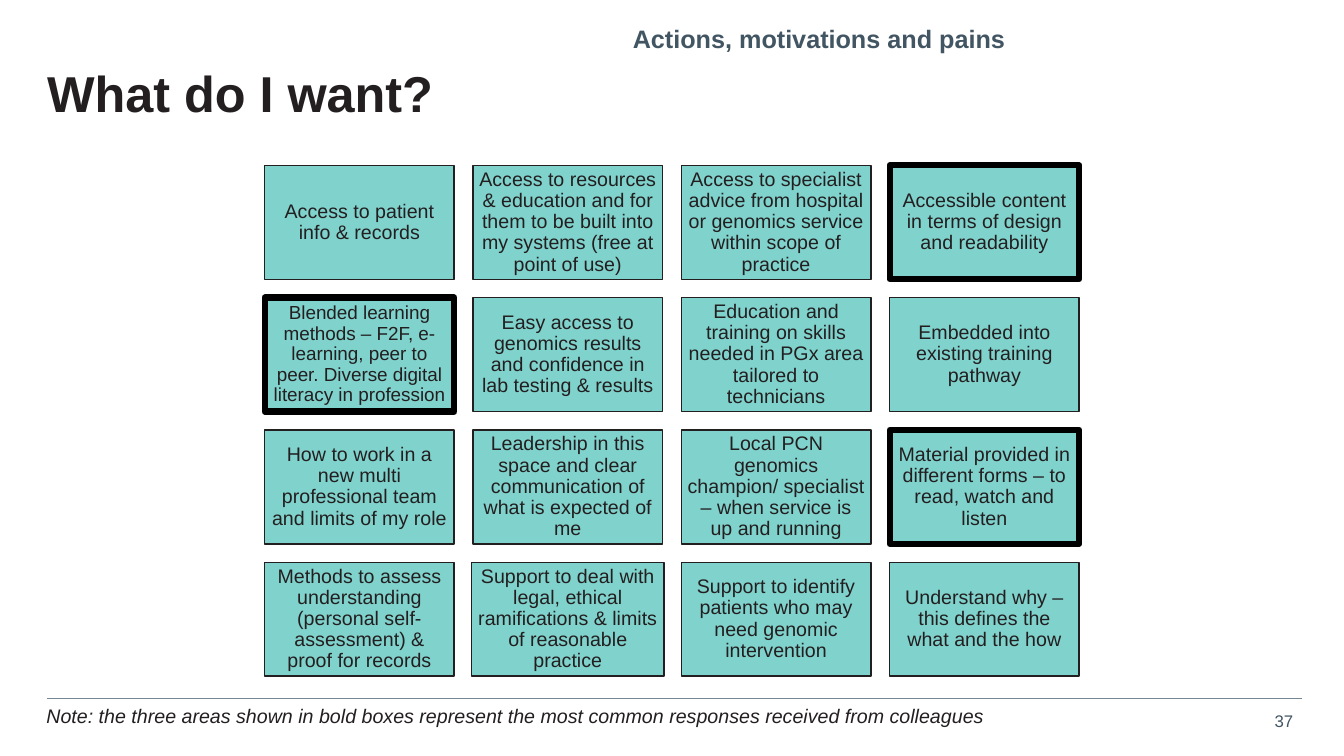
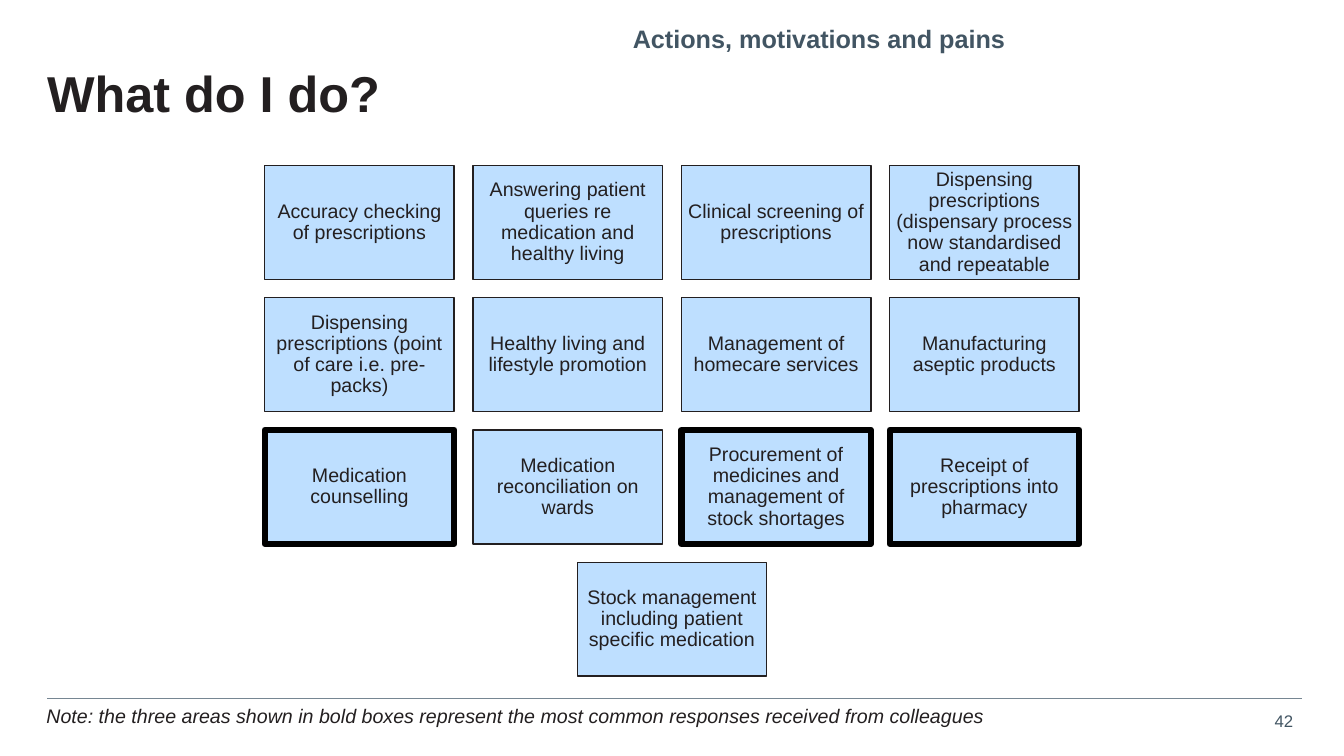
from dataclasses import dataclass

from lxml.etree import SubElement
from pptx import Presentation
from pptx.dml.color import RGBColor
from pptx.enum.shapes import MSO_CONNECTOR, MSO_SHAPE
from pptx.enum.text import MSO_ANCHOR, PP_ALIGN
from pptx.oxml.ns import qn
from pptx.util import Inches, Pt

INK = RGBColor(0x23, 0x1F, 0x20)
BLACK = RGBColor(0, 0, 0)
SLATE = RGBColor(0x42, 0x55, 0x63)
RULE_GREY = RGBColor(0x76, 0x86, 0x92)
TEAL = RGBColor(0x80, 0xD2, 0xCC)
SKY = RGBColor(0xBE, 0xDF, 0xFF)

SECTION = "Actions, motivations and pains"
NOTE = (
    "Note: the three areas shown in bold boxes represent "
    "the most common responses received from colleagues"
)


@dataclass
class Response:
    label: str
    common: bool = False
    size: float = 14
    widen: float = 0


WANTS = [
    Response("Access to patient info & records"),
    Response(
        "Access to resources & education and for them to be built into "
        "my systems (free at point of use)"
    ),
    Response(
        "Access to specialist advice from hospital or genomics service "
        "within scope of practice"
    ),
    Response("Accessible content in terms of design and readability", common=True),
    Response(
        "Blended learning methods – F2F, e-learning, peer to peer. "
        "Diverse digital literacy in profession",
        common=True,
        size=13.5,
    ),
    Response("Easy access to genomics results and confidence in lab testing & results"),
    Response("Education and training on skills needed in PGx area tailored to technicians"),
    Response("Embedded into existing training pathway"),
    Response("How to work in a new multi professional team and limits of my role"),
    Response("Leadership in this space and clear communication of what is expected of me"),
    Response("Local PCN genomics champion/ specialist – when service is up and running"),
    Response("Material provided in different forms – to read, watch and listen", common=True),
    Response("Methods to assess understanding (personal self-assessment) & proof for records"),
    Response(
        "Support to deal with legal, ethical ramifications & limits of reasonable practice",
        widen=0.2,
    ),
    Response("Support to identify patients who may need genomic intervention"),
    Response("Understand why – this defines the what and the how"),
]

TASKS = [
    Response("Accuracy checking of prescriptions"),
    Response("Answering patient queries re medication and healthy living"),
    Response("Clinical screening of prescriptions"),
    Response(
        "Dispensing prescriptions (dispensary process now standardised and repeatable"
    ),
    Response("Dispensing prescriptions (point of care i.e. pre-packs)"),
    Response("Healthy living and lifestyle promotion"),
    Response("Management of homecare services"),
    Response("Manufacturing aseptic products"),
    Response("Medication counselling", common=True),
    Response("Medication reconciliation on wards"),
    Response("Procurement of medicines and management of stock shortages", common=True),
    Response("Receipt of prescriptions into pharmacy", common=True),
    Response("Stock management including patient specific medication"),
]


class Deck:
    FONT = "Arial"
    COLUMNS = 4
    CARD_WIDTH, CARD_HEIGHT = 14.1, 15.07
    GAP_X, GAP_Y = 1.4, 2.43
    GRID_TOP = 21.87
    CARD_INSET = 0.06

    def __init__(self):
        self.presentation = Presentation()
        self.presentation.slide_width = Inches(13.33)
        self.presentation.slide_height = Inches(7.5)
        self.slide = None

    def across(self, percent):
        return round(self.presentation.slide_width * percent / 100)

    def down(self, percent):
        return round(self.presentation.slide_height * percent / 100)

    def area(self, left, top, width, height):
        return self.across(left), self.down(top), self.across(width), self.down(height)

    def set_text(self, frame, text, size, color=INK, bold=False, italic=False,
                 align=PP_ALIGN.LEFT, anchor=MSO_ANCHOR.TOP, spacing=None, inset=0):
        frame.text = text
        frame.word_wrap = True
        frame.vertical_anchor = anchor
        frame.margin_left = frame.margin_right = Inches(inset)
        frame.margin_top = frame.margin_bottom = Inches(inset)
        paragraph = frame.paragraphs[0]
        paragraph.alignment = align
        paragraph.line_spacing = spacing
        for run in paragraph.runs:
            run.font.name = self.FONT
            run.font.size = Pt(size)
            run.font.bold = bold
            run.font.italic = italic
            run.font.color.rgb = color

    def start(self, heading, number):
        self.slide = self.presentation.slides.add_slide(
            self.presentation.slide_layouts[5]
        )
        self.title(heading)
        self.text((35.85, 3.07, 38.95, 8.4), SECTION, 18, color=SLATE, bold=True,
                  align=PP_ALIGN.RIGHT, spacing=Pt(22))
        self.rule(3.5, 96.84, 92.4)
        self.text((3.45, 93.07, 88, 3.2), NOTE, 14, italic=True)
        self.text((93.15, 94, 3.07, 2.7), number, 12, color=SLATE,
                  align=PP_ALIGN.RIGHT)

    def title(self, heading):
        title = self.slide.shapes.title
        title.left, title.top, title.width, title.height = self.area(
            3.5, 9.07, 93.55, 9.07
        )
        self.set_text(title.text_frame, heading, 36, bold=True, spacing=0.9)

    def text(self, place, words, size, **style):
        box = self.slide.shapes.add_textbox(*self.area(*place))
        self.set_text(box.text_frame, words, size, **style)

    def rule(self, start, end, row):
        line = self.slide.shapes.add_connector(
            MSO_CONNECTOR.STRAIGHT,
            self.across(start), self.down(row), self.across(end), self.down(row),
        )
        line.line.color.rgb = RULE_GREY
        line.line.width = Pt(0.5)
        SubElement(line._element.spPr, qn("a:effectLst"))

    def card(self, response, left, top, fill):
        card = self.slide.shapes.add_shape(
            MSO_SHAPE.RECTANGLE,
            *self.area(left - response.widen / 2, top,
                       self.CARD_WIDTH + response.widen, self.CARD_HEIGHT),
        )
        card.shadow.inherit = False
        card.fill.solid()
        card.fill.fore_color.rgb = fill
        card.line.color.rgb = BLACK if response.common else INK
        card.line.width = Pt(4.5 if response.common else 1)
        self.set_text(card.text_frame, response.label, response.size,
                      align=PP_ALIGN.CENTER, anchor=MSO_ANCHOR.MIDDLE,
                      spacing=0.9, inset=self.CARD_INSET)

    def cards(self, responses, fill):
        pitch = self.CARD_WIDTH + self.GAP_X
        for first in range(0, len(responses), self.COLUMNS):
            row = responses[first:first + self.COLUMNS]
            left = (100 - len(row) * pitch + self.GAP_X) / 2
            top = self.GRID_TOP + first // self.COLUMNS * (self.CARD_HEIGHT + self.GAP_Y)
            for column, response in enumerate(row):
                self.card(response, left + column * pitch, top, fill)


def main():
    deck = Deck()
    for heading, number, responses, fill in (
        ("What do I want?", "37", WANTS, TEAL),
        ("What do I do?", "42", TASKS, SKY),
    ):
        deck.start(heading, number)
        deck.cards(responses, fill)
    deck.presentation.save("out.pptx")


if __name__ == "__main__":
    main()
